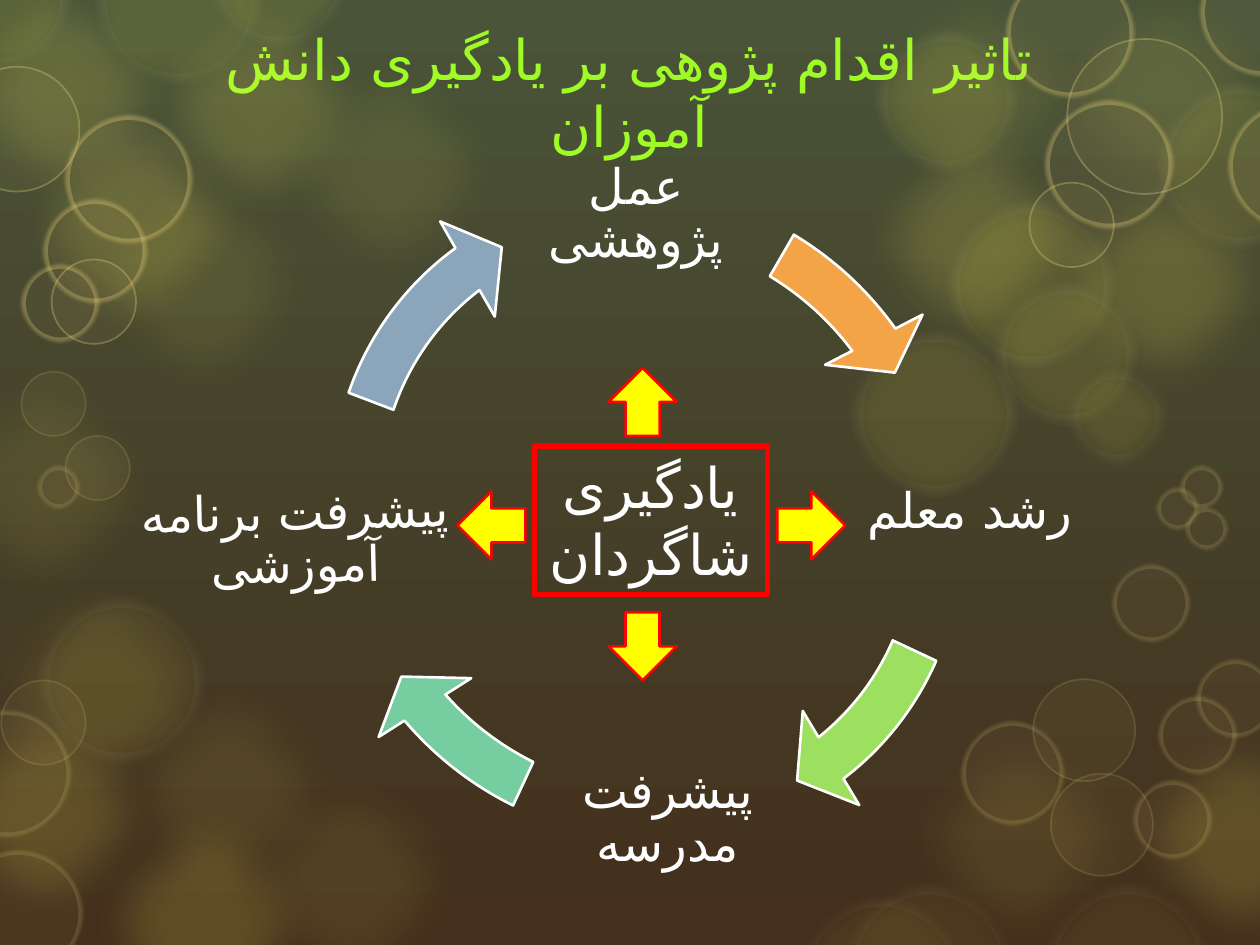
from lxml import etree
from pptx import Presentation
from pptx import util as u
from pptx.dml import color
from pptx.enum import shapes, text
from pptx.oxml import ns

COLOURS = {
    "sky": "495438", "earth": "432F1C", "title": "9FFB25", "white": "FFFFFF",
    "glow": "FCF059", "haze": "FEFCDF", "ring": "F1D77F",
    "orange": "F3A447", "lime": "9DDF5F", "mint": "75CDA0", "steel": "8BA5BB",
    "red": "FF0000", "yellow": "FFFF00",
}
FONT = "DejaVu Sans"
KIND = shapes.MSO_SHAPE

LIGHTS = {
    "glow": {"fill": "glow", "soft": 25},
    "haze": {"fill": "glow", "soft": 10, "line": "haze", "width": 14, "line_alpha": 6},
    "soft ring": {"fill": "ring", "soft": 2, "line": "ring", "width": 5},
    "ring": {"fill": "ring", "line": "ring", "width": 1},
}
BOKEH = [
    ("glow", 2.09, 9, [(-0.25, 4.42), (0.57, 1.2), (2.05, 0.31), (6.69, -0.29),
                       (8.2, -0.32), (7.06, 5.62), (0.77, 5.24), (1.73, 5.96),
                       (-0.7, 2.82)]),
    ("glow", 2.09, 16, [(0.57, 6.27), (-0.55, -0.32), (1.01, -0.18), (0, 0.72),
                        (8.2, 1.2), (8.81, 5.62), (-0.68, 5.41), (6.69, 0.86)]),
    ("haze", 1.33, 10, [(9.18, 0.65), (6.75, 2.62), (7.52, 1.59), (0.75, -0.65)]),
    ("haze", 1.14, 10, [(6.94, 0.23), (7.89, 2.24), (1.64, -0.75), (-0.57, -0.58)]),
    ("haze", 0.79, 10, [(8.47, 2.91)]),
    ("haze", 1.34, 6, [(0.3, 4.73), (6.32, 7.1), (6.7, 7.01), (8.28, 7.01)]),
    ("soft ring", 1, 5, [(0.52, 0.92), (7.99, -0.24), (9.53, -0.4), (9.75, 0.82),
                         (8.3, 0.8), (-0.44, 5.64), (-0.35, 6.75)]),
    ("soft ring", 0.81, 5, [(0.35, 1.59), (7.63, 5.73)]),
    ("soft ring", 0.61, 5, [(0.17, 2.1), (9, 6.2), (8.83, 4.48), (9.2, 5.53),
                            (9.5, 5.24)]),
    ("soft ring", 0.33, 5, [(9.37, 3.7), (9.18, 3.87), (9.41, 4.03), (0.3, 3.7)]),
    ("ring", 1.23, 5, [(8.47, 0.31)]),
    ("ring", 0.99, 5, [(-0.36, 0.53)]),
    ("ring", 0.81, 5, [(8.34, 6.14), (8.2, 5.39)]),
    ("ring", 0.67, 5, [(0.41, 2.06), (8.17, 1.45), (0.01, 5.4)]),
    ("ring", 0.51, 5, [(0.17, 2.95), (0.52, 3.46)]),
]
STAGES = [
    ("عمل پژوهشی", 4.05, 0.75, 2, 0),
    ("رشد معلم", 6.7, 3.11, 2, 0),
    ("پیشرفت مدرسه", 4.3, 5.54, 2, 0),
    ("پیشرفت برنامه آموزشی", 0.89, 3.33, 2.91, 358.7),
]
CYCLE = [
    ("orange", 2.34, 1.18, 7.74, 208.76),
    ("lime", 2.38, 1.32, 59.51, 43.84),
    ("mint", 2.4, 1.31, 112.62, 97.7),
    ("steel", 2.45, 1.2, 168.18, 149.22),
]


def rgb(name):
    """Return the named colour."""
    return color.RGBColor.from_string(COLOURS[name])


def inches(values):
    """Turn numbers into lengths."""
    return [u.Inches(value) for value in values]


def apply(target, values):
    """Set each attribute of the target from a dict."""
    for name, value in values.items():
        setattr(target, name, value)


def set_alpha(parent, percent):
    """Give the solid fill inside the parent element an opacity."""
    tone = parent.find(ns.qn("a:solidFill")).find(ns.qn("a:srgbClr"))
    etree.SubElement(tone, ns.qn("a:alpha")).set("val", str(percent * 1000))


def add_figure(page, kind, place, fill=None, line=None, width=1.5, rotation=0):
    """Add a preset shape without shadow."""
    figure = page.shapes.add_shape(kind, *inches(place))
    figure.shadow.inherit = False
    figure.rotation = rotation
    for paint, name in ((figure.fill, fill), (figure.line.fill, line)):
        if name:
            paint.solid()
            paint.fore_color.rgb = rgb(name)
        else:
            paint.background()
    if line:
        figure.line.width = u.Pt(width)
    return figure


def add_light(page, style, size, alpha, left, top):
    """Add one translucent circle, with a brighter rim in the upper part."""
    look = {key: style[key] for key in ("fill", "line", "width") if key in style}
    light = add_figure(page, KIND.OVAL, (left, top, size, size), **look)
    properties = light._element.spPr
    set_alpha(properties, alpha)
    if "line" in style:
        rim = style.get("line_alpha", 30 if top < 2.5 else 15)
        set_alpha(properties.find(ns.qn("a:ln")), rim)
    if "soft" in style:
        effects = properties.find(ns.qn("a:effectLst"))
        edge = etree.SubElement(effects, ns.qn("a:softEdge"))
        edge.set("rad", str(int(u.Pt(style["soft"]))))


def write(box, words, size, tone, side=0.1, spacing=1.0, rtl=True,
          anchor=text.MSO_ANCHOR.MIDDLE):
    """Put centred Persian text in a box."""
    apply(box.text_frame, {
        "word_wrap": True, "auto_size": text.MSO_AUTO_SIZE.NONE,
        "vertical_anchor": anchor,
        "margin_left": u.Inches(side), "margin_right": u.Inches(side)})
    para = box.text_frame.paragraphs[0]
    apply(para, {"alignment": text.PP_ALIGN.CENTER, "line_spacing": spacing})
    if rtl:
        para._p.get_or_add_pPr().set("rtl", "1")
    span = para.add_run()
    span.text = words
    apply(span.font, {"size": u.Pt(size), "name": FONT})
    span.font.color.rgb = rgb(tone)
    script = etree.SubElement(span.font._element, ns.qn("a:cs"))
    script.set("typeface", FONT)


def add_title(page, words):
    """Move and fill the title placeholder."""
    title = page.shapes.title
    places = inches((1.33, 0.42, 7.33, 0.62))
    apply(title, dict(zip(("left", "top", "width", "height"), places)))
    write(title, words, 32, "title", rtl=False)


def add_stage(page, words, left, top, width, rotation):
    """Add the label of one stage of the cycle."""
    box = page.shapes.add_textbox(*inches((left, top, width, 1.92)))
    box.rotation = rotation
    write(box, words, 28, "white", side=0.05, spacing=0.9)


def add_cycle_arrow(page, tone, left, top, head, tail):
    """Add one curved arrow of the cycle."""
    arrow = add_figure(page, KIND.CIRCULAR_ARROW, (left, top, 5.44, 5.66),
                       tone, "white", rotation=312.1)
    for index, value in enumerate((0.07, 4.65, head, tail, 0.08)):
        arrow.adjustments[index] = value


def add_pointers(page, size=0.54):
    """Add the four arrows that lead out of the centre."""
    for sign, rotation in ((1, 0), (-1, 180)):
        for kind, x, y in ((KIND.RIGHT_ARROW, 5.17 + sign * 1.27, 4.17),
                           (KIND.DOWN_ARROW, 5.1, 4.16 + sign * 0.97)):
            place = (x - size / 2, y - size / 2, size, size)
            add_figure(page, kind, place, "yellow", "red", rotation=rotation)


def paint_background(page):
    """Fill the page from sky to earth."""
    fill = page.background.fill
    fill.gradient()
    fill.gradient_angle = 270
    for stop, position, name in zip(fill.gradient_stops, (0, 1), ("sky", "earth")):
        stop.position = position
        stop.color.rgb = rgb(name)


def main():
    """Build the deck."""
    deck = Presentation()
    apply(deck, {"slide_width": u.Inches(10), "slide_height": u.Inches(7.5)})
    page = deck.slides.add_slide(deck.slide_layouts[5])
    paint_background(page)
    for name, size, alpha, corners in BOKEH:
        for corner in corners:
            add_light(page, LIGHTS[name], size, alpha, *corner)
    add_title(page, "تاثیر اقدام پژوهی بر یادگیری دانش آموزان")
    for stage, arrow in zip(STAGES, CYCLE):
        add_stage(page, *stage)
        add_cycle_arrow(page, *arrow)
    centre = add_figure(page, KIND.RECTANGLE, (4.24, 3.54, 1.85, 1.18),
                        line="red", width=3)
    write(centre, "یادگیری شاگردان", 32, "white", anchor=text.MSO_ANCHOR.TOP)
    add_pointers(page)
    deck.save("out.pptx")


if __name__ == "__main__":
    main()
